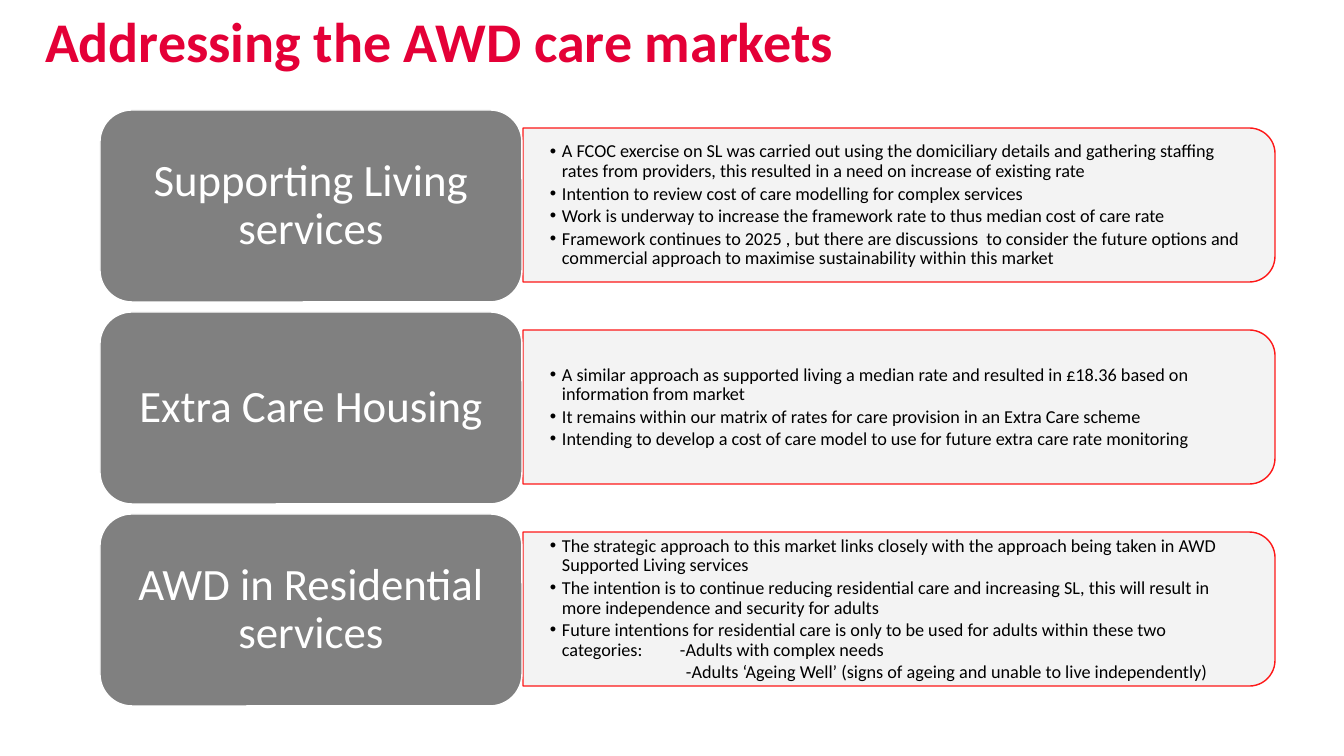
from lxml import etree
from pptx import Presentation
from pptx import util as u
from pptx.dml.color import RGBColor
from pptx.enum import shapes, text
from pptx.oxml import ns

RED_TITLE = RGBColor(0xE4, 0x00, 0x37)
RED_LINE = RGBColor(0xFF, 0x00, 0x00)
GREY = RGBColor(0x80, 0x80, 0x80)
PALE = RGBColor(0xF2, 0xF2, 0xF2)
WHITE = RGBColor(0xFF, 0xFF, 0xFF)
BLACK = RGBColor(0x00, 0x00, 0x00)

TITLE = "Addressing the AWD care markets"
MARKETS = [
    ("Supporting Living services", [
        "A FCOC exercise on SL was carried out using the domiciliary details and gathering "
        "staffing rates from providers, this resulted in a need on increase of existing rate",
        "Intention to review cost of care modelling for complex services",
        "Work is underway to increase the framework rate to thus median cost of care rate",
        "Framework continues to 2025 , but there are discussions  to consider the future options "
        "and commercial approach to maximise sustainability within this market",
    ], None),
    ("Extra Care Housing", [
        "A similar approach as supported living a median rate and resulted in £18.36 based on "
        "information from market",
        "It remains within our matrix of rates for care provision in an Extra Care scheme",
        "Intending to develop a cost of care model to use for future extra care rate monitoring",
    ], None),
    ("AWD in Residential services", [
        "The strategic approach to this market links closely with the approach being taken in "
        "AWD Supported Living services",
        "The intention is to continue reducing residential care and increasing SL, this will "
        "result in more independence and security for adults",
        "Future intentions for residential care is only to be used for adults within these two "
        "categories:\t-Adults with complex needs",
    ], "-Adults ‘Ageing Well’ (signs of ageing and unable to live independently)"),
]


def px(length):
    return u.Emu(round(length * 914400 / 100.8))


def assign(target, values):
    for name, value in values.items():
        setattr(target, name, value)


class MarketSlide:
    font = "Calibri"
    hanging = 12
    category_tab = 130
    category_indent = 136

    def __init__(self, slide):
        self.slide = slide

    def place(self, item, left, top, width, height):
        assign(item, {"left": px(left), "top": px(top),
                      "width": px(width), "height": px(height)})

    def frame(self, item, anchor, across, down):
        assign(item.text_frame, {
            "word_wrap": True, "auto_size": text.MSO_AUTO_SIZE.NONE,
            "vertical_anchor": anchor,
            "margin_left": px(across), "margin_right": px(across),
            "margin_top": px(down), "margin_bottom": px(down)})
        return item.text_frame

    def wording(self, paragraph, words, size, colour, align, bold=False, after=0):
        paragraph.text = words
        assign(paragraph, {"alignment": align, "line_spacing": 0.9,
                           "space_before": u.Pt(0), "space_after": u.Pt(after)})
        assign(paragraph.font, {"name": self.font, "size": u.Pt(size), "bold": bold})
        paragraph.font.color.rgb = colour

    def title(self, words):
        heading = self.slide.shapes.title
        self.place(heading, 35, 9, 1209, 100)
        frame = self.frame(heading, text.MSO_ANCHOR.TOP, 10, 5)
        self.wording(frame.paragraphs[0], words, 40, RED_TITLE, text.PP_ALIGN.LEFT, True)

    def block(self, kind, box, fill, line):
        block = self.slide.shapes.add_shape(kind, *map(px, box))
        block.shadow.inherit = False
        block.fill.solid()
        block.fill.fore_color.rgb = fill
        block.line.color.rgb = line
        block.line.width = u.Pt(1)
        return block

    def panel(self, left, top, width, height):
        shift = (width - height) // 2
        panel = self.block(shapes.MSO_SHAPE.ROUND_2_SAME_RECTANGLE,
                           (left + shift, top - shift, height, width), PALE, RED_LINE)
        panel.rotation = 90
        for colour in panel._element.spPr.iter(ns.qn("a:srgbClr")):
            etree.SubElement(colour, ns.qn("a:alpha"), val="90000")

    def card(self, words, *box):
        card = self.block(shapes.MSO_SHAPE.ROUNDED_RECTANGLE, box, GREY, WHITE)
        frame = self.frame(card, text.MSO_ANCHOR.MIDDLE, 13, 7)
        self.wording(frame.paragraphs[0], words, 32, WHITE, text.PP_ALIGN.CENTER)

    def indent(self, paragraph, margin, first, bullet):
        props = paragraph._p.get_or_add_pPr()
        props.set("marL", str(px(margin)))
        props.set("indent", str(px(first)))
        default_run = props.find(ns.qn("a:defRPr"))
        extras = []
        if bullet:
            extras += [("a:buFont", {"typeface": "Arial"}), ("a:buChar", {"char": "•"})]
        else:
            extras.append(("a:buNone", {}))
        if "\t" in paragraph.text:
            extras.append(("a:tabLst", {}))
        for tag, values in extras:
            extra = etree.SubElement(props, ns.qn(tag), values)
            if default_run is not None:
                default_run.addprevious(extra)
            if tag == "a:tabLst":
                etree.SubElement(extra, ns.qn("a:tab"),
                                 pos=str(px(self.category_tab)), algn="l")

    def points(self, body, points, category, *box):
        self.slide.shapes._spTree.append(body._element)
        self.place(body, *box)
        frame = self.frame(body, text.MSO_ANCHOR.MIDDLE, 27, 14)
        lines = [(point, self.hanging, -self.hanging, True) for point in points]
        if category:
            lines.append((category, self.category_indent, 0, False))
        for number, (words, margin, first, bullet) in enumerate(lines):
            paragraph = frame.add_paragraph() if number else frame.paragraphs[0]
            self.wording(paragraph, words, 13, BLACK, text.PP_ALIGN.LEFT, after=2)
            for run in paragraph.runs:
                assign(run.font, {"name": self.font, "size": u.Pt(13), "bold": False})
                run.font.color.rgb = BLACK
            self.indent(paragraph, margin, first, bullet)


def main():
    deck = Presentation()
    deck.slide_width, deck.slide_height = px(1344), px(756)
    slide = deck.slides.add_slide(deck.slide_layouts.get_by_name("Comparison"))
    page = MarketSlide(slide)
    page.title(TITLE)
    bodies = [holder for holder in slide.placeholders
              if holder.placeholder_format.idx in range(1, 5)]
    for row, (market, points, category) in enumerate(MARKETS):
        top = 110 + row * 202
        page.panel(523, top + 18, 752, 154)
        page.points(bodies[row], points, category, 523, top + 26, 744, 139)
        page.card(market, 100, top, 422, 192)
    for holder in list(slide.placeholders):
        if not holder.text_frame.text:
            holder._element.getparent().remove(holder._element)
    deck.save("out.pptx")


if __name__ == "__main__":
    main()
